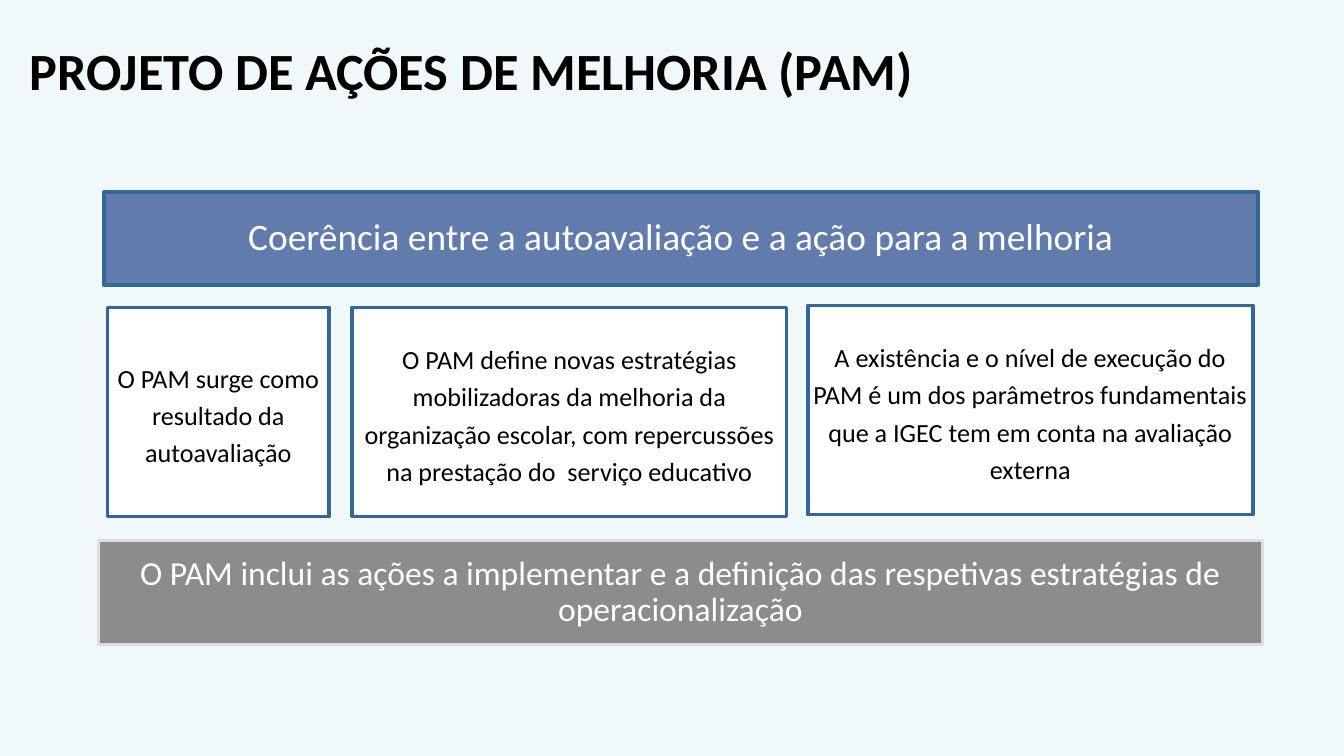
from pptx import Presentation
from pptx.dml.color import RGBColor
from pptx.enum.shapes import MSO_SHAPE
from pptx.enum.text import MSO_ANCHOR as Anchor, PP_ALIGN as Align
from pptx.util import Pt

BACKGROUND = RGBColor(0xF0, 0xF8, 0xF9)
BLUE = RGBColor(0x60, 0x7B, 0xAC)
BORDER = RGBColor(0x33, 0x66, 0x99)
GREY = RGBColor(0x8B, 0x8C, 0x8C)
PALE_GREY = RGBColor(0xDE, 0xDE, 0xDE)
WHITE = RGBColor(0xFF, 0xFF, 0xFF)
BLACK = RGBColor(0x00, 0x00, 0x00)
FONT = "Calibri"

TITLE = "PROJETO DE AÇÕES DE MELHORIA (PAM)"
HEADER = "Coerência entre a autoavaliação e a ação para a melhoria"
FOOTER = (
    "O PAM inclui as ações a implementar e a definição das respetivas "
    "estratégias de operacionalização"
)
CARD_HEIGHT = 112
CARDS = [
    (57.6, 164.7, 118.8, "O PAM surge como resultado da autoavaliação"),
    (188.8, 164.7, 232.6,
     "O PAM define novas estratégias mobilizadoras da melhoria da organização "
     "escolar, com repercussões na prestação do  serviço educativo"),
    (432.8, 163.7, 238.4,
     "A existência e o nível de execução do PAM é um dos parâmetros fundamentais "
     "que a IGEC tem em conta na avaliação externa"),
]


def add_text(paragraph, text, size, color, bold=False):
    run = paragraph.add_run()
    run.text = text
    run.font.name = FONT
    run.font.size = Pt(size)
    run.font.bold = bold
    run.font.color.rgb = color


def add_box(slide, bounds, text, size, color, fill, border,
            line_width=2, spacing=0.9, inset=0.72):
    shape = slide.shapes.add_shape(MSO_SHAPE.RECTANGLE, *map(Pt, bounds))
    shape.shadow.inherit = False
    shape.fill.solid()
    shape.fill.fore_color.rgb = fill
    shape.line.color.rgb = border
    shape.line.width = Pt(line_width)
    frame = shape.text_frame
    frame.word_wrap = True
    frame.vertical_anchor = Anchor.MIDDLE
    frame.margin_left = frame.margin_right = Pt(inset)
    frame.margin_top = frame.margin_bottom = Pt(inset)
    paragraph = frame.paragraphs[0]
    paragraph.alignment = Align.CENTER
    paragraph.line_spacing = spacing
    add_text(paragraph, text, size, color)


presentation = Presentation()
presentation.slide_width = Pt(720)
presentation.slide_height = Pt(405)
slide = presentation.slides.add_slide(presentation.slide_layouts[5])
slide.background.fill.solid()
slide.background.fill.fore_color.rgb = BACKGROUND

title = slide.shapes.title
title.left, title.top, title.width, title.height = map(Pt, (8.6, 16.6, 680.4, 67.7))
title.text_frame.vertical_anchor = Anchor.TOP
title.text_frame.word_wrap = True
title_paragraph = title.text_frame.paragraphs[0]
title_paragraph.alignment = Align.LEFT
add_text(title_paragraph, TITLE, 28, BLACK, bold=True)

add_box(slide, (55.8, 103, 618, 49.7), HEADER, 20, WHITE, BLUE, BORDER)
for left, top, width, text in CARDS:
    add_box(slide, (left, top, width, CARD_HEIGHT), text, 14, BLACK, WHITE, BORDER,
            spacing=Pt(20))
add_box(slide, (52.8, 289.6, 623.5, 55.8), FOOTER, 18, WHITE, GREY, PALE_GREY,
        line_width=1.5, inset=5)

presentation.save("out.pptx")
